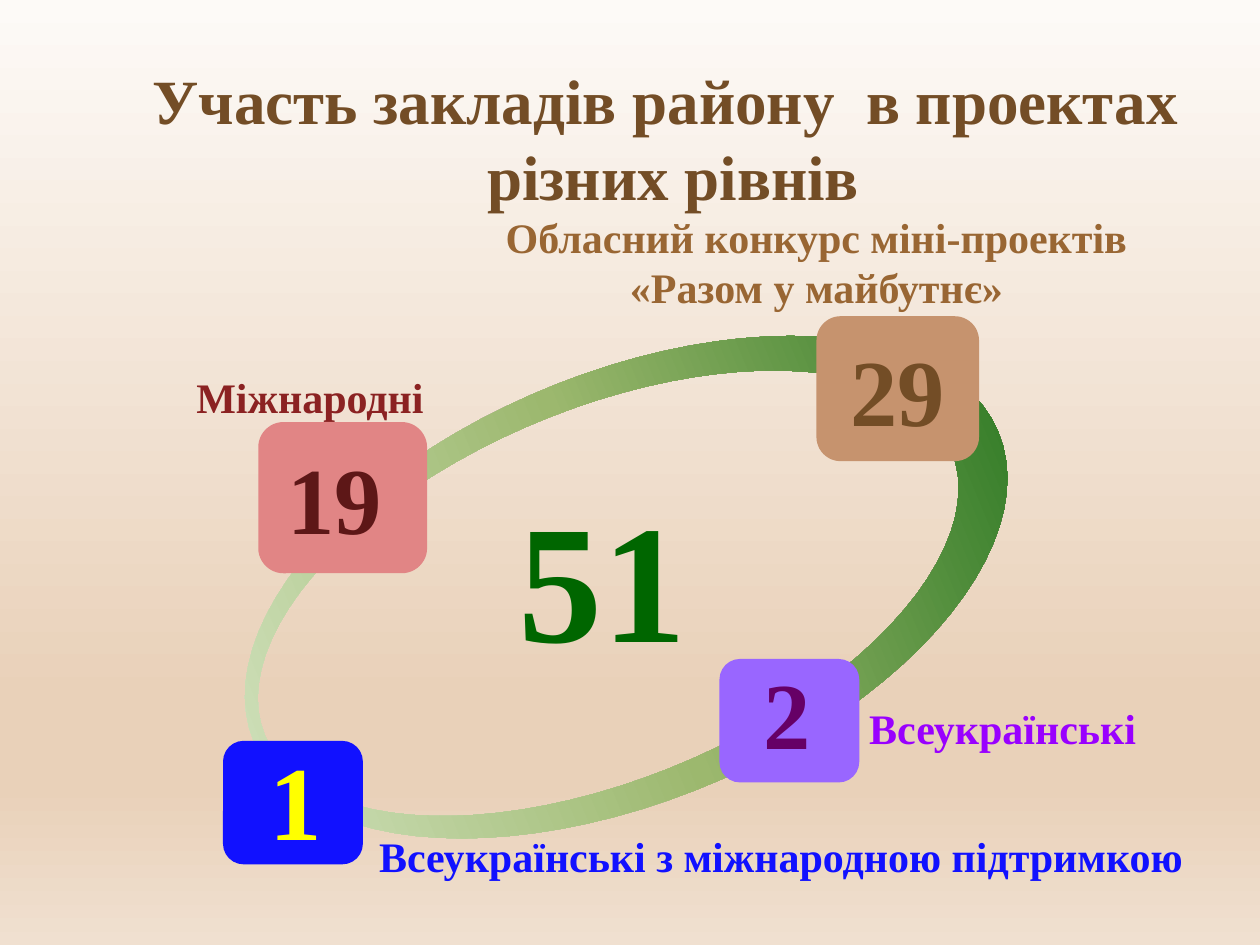
import math
from lxml import etree
from pptx import Presentation
from pptx.dml.color import RGBColor
from pptx.enum.shapes import MSO_SHAPE
from pptx.enum.text import MSO_ANCHOR, MSO_AUTO_SIZE, PP_ALIGN
from pptx.oxml import parse_xml
from pptx.oxml.ns import nsdecls, qn
from pptx.util import Inches, Pt

ROUND_RECT = MSO_SHAPE.ROUNDED_RECTANGLE
MIDDLE = MSO_ANCHOR.MIDDLE
GROW = MSO_AUTO_SIZE.SHAPE_TO_FIT_TEXT
LEFT, CENTER = PP_ALIGN.LEFT, PP_ALIGN.CENTER


def rgb(color):
    return RGBColor.from_string(color)


def set_gradient(fill, element, stops, angle):
    fill.gradient()
    fill.gradient_angle = angle
    gs_list = element.find(".//" + qn("a:gsLst"))
    for gs in list(gs_list):
        gs_list.remove(gs)
    for pos, color in stops:
        gs = etree.SubElement(gs_list, qn("a:gs"), pos=str(pos * 1000))
        etree.SubElement(gs, qn("a:srgbClr"), val=color)


prs = Presentation()
prs.slide_width, prs.slide_height = Inches(10), Inches(7.5)
s = prs.slides.add_slide(prs.slide_layouts[6])
set_gradient(s.background.fill, s.element,
             [(0, "FDFAF7"), (74, "E9D1B9"), (83, "E9D1B9"), (100, "F0E0D0")], 270)

contours = []
for cx, cy, rx, ry, turn in [(4.97, 4.66, 3.2, 1.7, 1), (4.82, 4.65, 2.95, 1.47, -1)]:
    angles = [turn * math.radians(a) for a in range(0, 360, 4)]
    contours.append([(Inches(cx + rx * math.cos(a)), Inches(cy + ry * math.sin(a)))
                     for a in angles])
outer, inner = contours
builder = s.shapes.build_freeform(*outer[0])
builder.add_line_segments(outer[1:])
builder.move_to(*inner[0])
builder.add_line_segments(inner[1:])
ring = builder.convert_to_shape()
ring.rotation = 337.4
ring.shadow.inherit = False
ring.line.fill.background()
set_gradient(ring.fill, ring.element, [(0, "DDEBCF"), (50, "9CB86E"), (100, "156B13")], 0)

cards = [
    (2.05, 3.35, 1.34, 1.2, "E18585"),
    (5.71, 5.23, 1.11, 0.98, "9966FF"),
    (1.77, 5.88, 1.11, 0.98, "1111FF"),
    (6.48, 2.51, 1.29, 1.15, "C6936E"),
]
for x, y, w, h, color in cards:
    card = s.shapes.add_shape(ROUND_RECT, Inches(x), Inches(y), Inches(w), Inches(h))
    card.shadow.inherit = False
    card.fill.solid()
    card.fill.fore_color.rgb = rgb(color)
    card.line.fill.background()

texts = [
    (1.76, 5.79, 1.17, 1.11, ["1"], 60, "FFFF00", CENTER),
    (5.96, 5.15, 1.26, 1.01, ["2"], 54, "660066", LEFT),
    (2.18, 3.44, 1.26, 1.01, ["19"], 54, "5D1717", LEFT),
    (4.02, 3.72, 1.7, 1.72, ["51"], 96, "006600", LEFT),
    (1.46, 2.9, 2.72, 0.5, ["Міжнародні"], 24, "8B2222", LEFT),
    (1.07, 0.44, 8.42, 1.31, ["Участь закладів району  в проектах", " різних рівнів"],
     36, "734D26", CENTER),
    (2.91, 6.54, 6.68, 0.5, ["Всеукраїнські з міжнародною підтримкою"], 24, "1111FF", LEFT),
    (3.73, 1.63, 5.5, 0.91, ["Обласний конкурс міні-проектів «Разом у майбутнє»"],
     24, "996633", CENTER),
    (6.8, 5.53, 2.43, 0.5, ["Всеукраїнські"], 24, "9900FF", LEFT),
    (None, None, None, None, ["29"], 54, "734D26", CENTER),
]
for x, y, w, h, lines, size, color, align in texts:
    if x is None:
        tf = card.text_frame
        tf.vertical_anchor = MIDDLE
        tf.word_wrap = False
    else:
        tf = s.shapes.add_textbox(Inches(x), Inches(y), Inches(w), Inches(h)).text_frame
        tf.word_wrap = len(lines) == 1
        tf.auto_size = GROW
    tf.text = "\n".join(lines)
    for p in tf.paragraphs:
        p.alignment = align
        p.font.name = "Times New Roman"
        p.font.size = Pt(size)
        p.font.bold = True
        p.font.color.rgb = rgb(color)
    if lines == ["51"]:
        r = tf.paragraphs[0].runs[0]
        r.font.size = Pt(size)
        r.font.color.rgb = rgb(color)
        r.font.fill.fore_color.rgb = rgb(color)
        r_pr = r.font.color and tf.paragraphs[0].runs[0]._r.get_or_add_rPr()
        r_pr.append(parse_xml(
            f'<a:effectLst {nsdecls("a")}><a:outerShdw blurRad="38100" dist="38100" '
            'dir="2700000" algn="tl"><a:srgbClr val="000000"><a:alpha val="43000"/>'
            '</a:srgbClr></a:outerShdw></a:effectLst>'))

prs.save("out.pptx")
